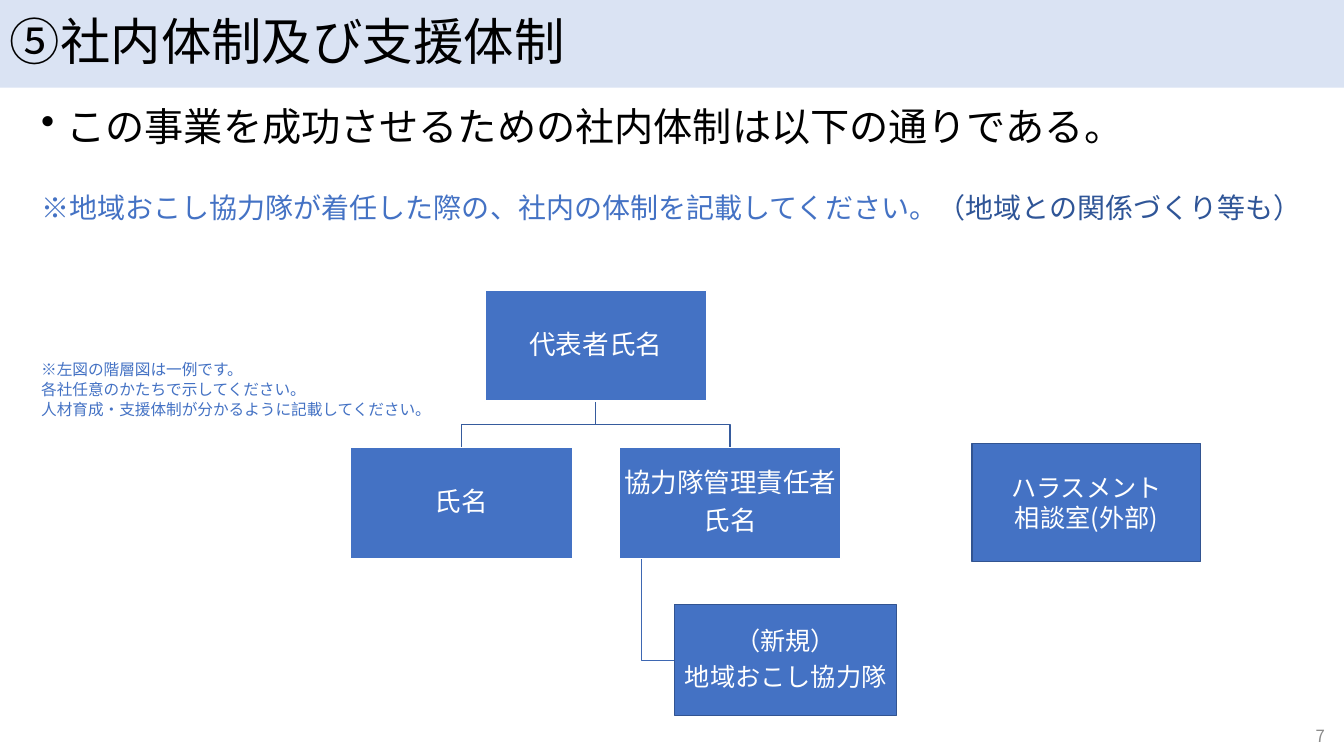
import lxml.etree
import pptx
import pptx.dml.color
import pptx.enum.shapes
import pptx.enum.text
import pptx.oxml.ns
import pptx.util

COLORS = {
    "black": "000000", "white": "FFFFFF", "band": "DAE3F3", "blue": "4472C4",
    "navy": "2F5597", "edge": "325491", "branch": "365B9D", "stem": "3E67B2",
    "gray": "8C8C8C",
}
ALIGN = pptx.enum.text.PP_ALIGN
ANCHOR = pptx.enum.text.MSO_ANCHOR


def rgb(name):
    return pptx.dml.color.RGBColor.from_string(COLORS[name])


class Deck:
    font = "Noto Sans CJK JP"

    def __init__(self):
        self.file = pptx.Presentation()
        self.file.slide_width = pptx.util.Inches(13.33)
        self.file.slide_height = pptx.util.Inches(7.5)
        self.slide = self.file.slides.add_slide(self.file.slide_layouts[6])

    def place(self, x, y):
        return (round(self.file.slide_width * x / 100),
                round(self.file.slide_height * y / 100))

    def style(self, paragraph, size, color, align=ALIGN.LEFT, spacing=1, before=0, after=0):
        paragraph.alignment = align
        paragraph.line_spacing = spacing
        paragraph.space_before = pptx.util.Pt(before)
        paragraph.space_after = pptx.util.Pt(after)
        paragraph.font.size = pptx.util.Pt(size)
        paragraph.font.name = self.font
        paragraph.font.color.rgb = rgb(color)
        defaults = paragraph._p.pPr.find(pptx.oxml.ns.qn("a:defRPr"))
        east_asian = lxml.etree.SubElement(defaults, pptx.oxml.ns.qn("a:ea"))
        east_asian.set("typeface", self.font)

    def bullet(self, paragraph):
        properties = paragraph._p.get_or_add_pPr()
        properties.set("marL", str(pptx.util.Inches(0.25)))
        properties.set("indent", str(-pptx.util.Inches(0.25)))
        mark = lxml.etree.Element(pptx.oxml.ns.qn("a:buChar"))
        mark.set("char", "•")
        properties.find(pptx.oxml.ns.qn("a:defRPr")).addprevious(mark)

    def fill_text(self, frame, lines, anchor=ANCHOR.MIDDLE, inset=None, **style):
        frame.word_wrap = True
        frame.vertical_anchor = anchor
        if inset is not None:
            frame.margin_left = frame.margin_right = pptx.util.Inches(inset)
            frame.margin_top = frame.margin_bottom = pptx.util.Inches(inset)
        for index, line in enumerate(lines):
            paragraph = frame.add_paragraph() if index else frame.paragraphs[0]
            paragraph.add_run().text = line
            self.style(paragraph, **style)

    def text(self, x, y, width, height, lines, **style):
        frame = self.slide.shapes.add_textbox(
            *self.place(x, y), *self.place(width, height)).text_frame
        self.fill_text(frame, lines, **style)
        return frame

    def box(self, x, y, width, height, lines, fill="blue", line=None, **style):
        shape = self.slide.shapes.add_shape(
            pptx.enum.shapes.MSO_SHAPE.RECTANGLE,
            *self.place(x, y), *self.place(width, height))
        shape.shadow.inherit = False
        shape.fill.solid()
        shape.fill.fore_color.rgb = rgb(fill)
        if line:
            shape.line.color.rgb = rgb(line)
            shape.line.width = pptx.util.Pt(1)
        else:
            shape.line.fill.background()
        self.fill_text(shape.text_frame, lines, **style)

    def route(self, points, color):
        start, *rest = [self.place(*point) for point in points]
        builder = self.slide.shapes.build_freeform(*start)
        builder.add_line_segments(rest, close=False)
        shape = builder.convert_to_shape()
        shape.shadow.inherit = False
        shape.fill.background()
        shape.line.color.rgb = rgb(color)
        shape.line.width = pptx.util.Pt(1)


def main():
    deck = Deck()
    deck.box(0, 0, 100, 11.6, ["⑤社内体制及び支援体制"], fill="band",
             size=36, color="black", spacing=0.9)

    body = deck.text(2.33, 13.6, 97, 23.33,
                     ["この事業を成功させるための社内体制は以下の通りである。"],
                     anchor=ANCHOR.TOP, size=28, color="black", spacing=0.9, before=10)
    deck.bullet(body.paragraphs[0])
    guidance = body.add_paragraph()
    guidance.add_run().text = "※地域おこし協力隊が着任した際の、社内の体制を記載してください。"
    relations = guidance.add_run()
    relations.text = "（地域との関係づくり等も）"
    deck.style(guidance, 20, "blue", spacing=0.9, before=31.4)
    relations.font.color.rgb = rgb("navy")

    width, height = 16.5, 14.67
    half_pitch, row_pitch = 10, 20.8
    top_x, top_y = 36.08, 38.4
    staff_x, manager_x = top_x - half_pitch, top_x + half_pitch
    second_y, third_y = top_y + row_pitch, top_y + 2 * row_pitch
    recruit_x = manager_x + width / 4
    stem_x = manager_x + width / 10
    recruit_middle = third_y + height / 2
    deck.route([(stem_x, second_y + height), (stem_x, recruit_middle),
                (recruit_x, recruit_middle)], "stem")

    center = top_x + width / 2
    fork_y = (top_y + height + second_y) / 2
    for end in (center + half_pitch, center - half_pitch):
        deck.route([(center, top_y + height), (center, fork_y),
                    (end, fork_y), (end, second_y)], "branch")

    members = [
        (top_x, top_y, ["代表者氏名"], 19, "white"),
        (staff_x, second_y, ["氏名"], 19, "white"),
        (manager_x, second_y, ["協力隊管理責任者", "氏名"], 19, "white"),
        (recruit_x, third_y, ["（新規）", "地域おこし協力隊"], 18, "edge"),
    ]
    for x, y, lines, size, line in members:
        deck.box(x, y, width, height, lines, line=line, inset=0.01, size=size,
                 color="white", align=ALIGN.CENTER, spacing=0.9, after=size * 0.35)

    deck.text(2.33, 47.6, 32.18, 11.2,
              ["※左図の階層図は一例です。", "各社任意のかたちで示してください。",
               "人材育成・支援体制が分かるように記載してください。"],
              anchor=ANCHOR.TOP, size=11.2, color="blue", spacing=0.7, before=5)
    deck.box(72.32, 58.67, 17.03, 15.6, ["ハラスメント", "相談室(外部)"], line="edge",
             size=18, color="white", align=ALIGN.CENTER)
    deck.text(76.82, 94.67, 22.5, 5.33, ["7"], size=12, color="gray", align=ALIGN.RIGHT)
    deck.file.save("out.pptx")


if __name__ == "__main__":
    main()
